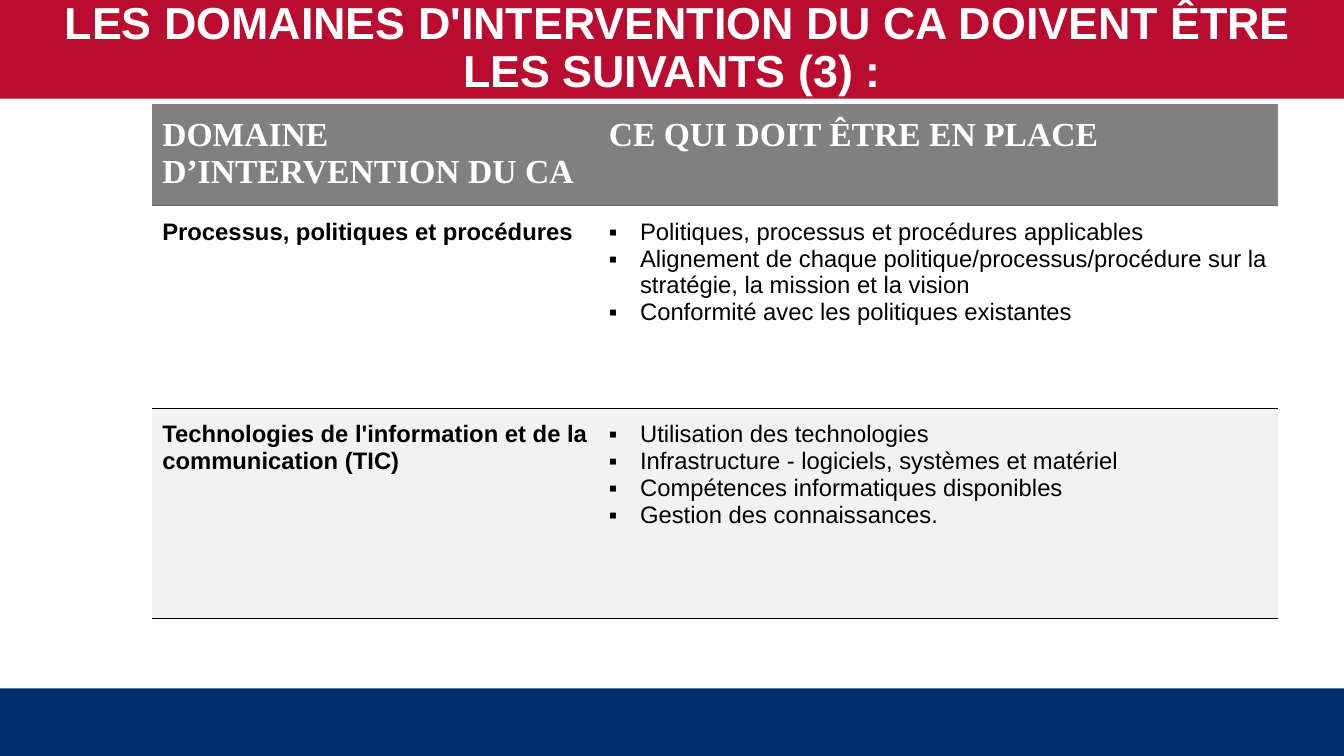
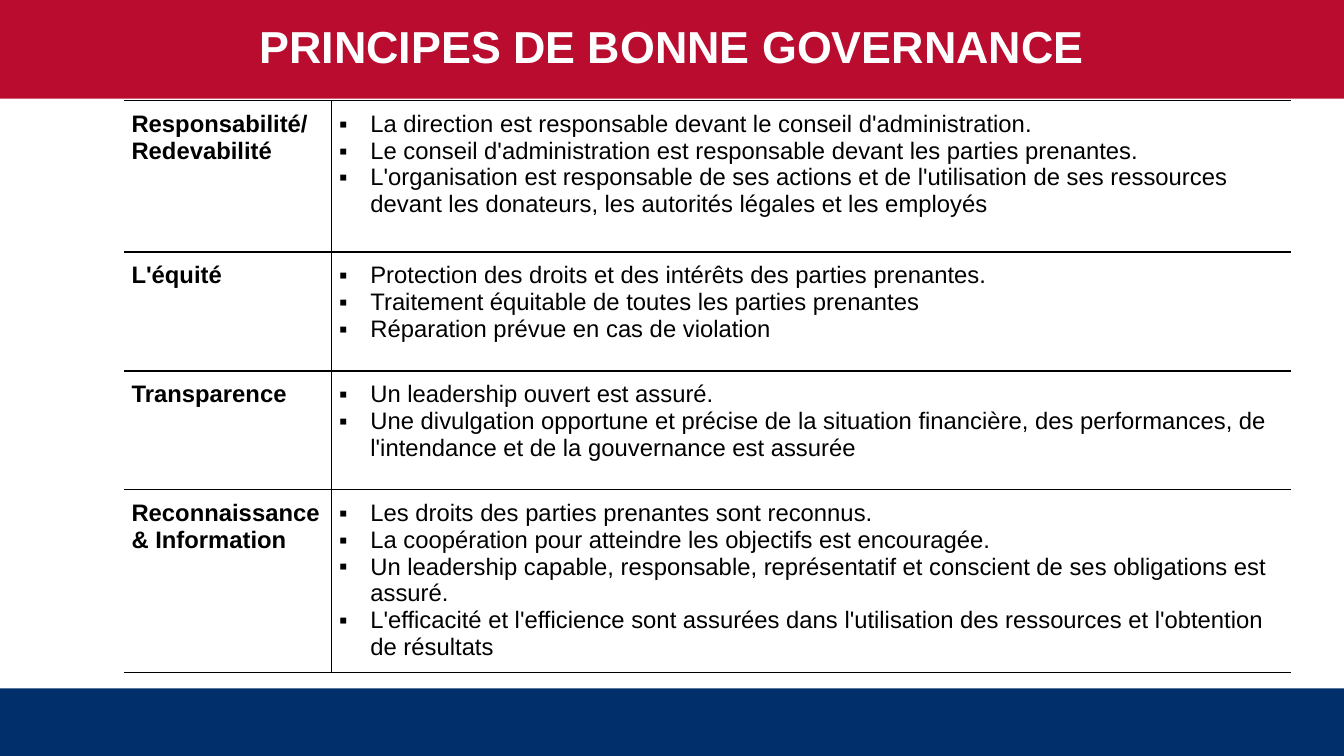
"""Builds two slides on board responsibilities and governance principles."""
from dataclasses import dataclass

from lxml import etree
from pptx import Presentation
from pptx.dml.color import RGBColor
from pptx.enum.shapes import MSO_SHAPE
from pptx.enum.text import MSO_ANCHOR, MSO_AUTO_SIZE, PP_ALIGN
from pptx.oxml.ns import qn
from pptx.util import Inches, Pt

RECT = MSO_SHAPE.RECTANGLE
MIDDLE, TOP = MSO_ANCHOR.MIDDLE, MSO_ANCHOR.TOP
CENTER, LEFT = PP_ALIGN.CENTER, PP_ALIGN.LEFT
NO_FIT = MSO_AUTO_SIZE.NONE
TITLE_ONLY = 5

COLORS = {
    "red": "BA0C2F",
    "navy": "002F6C",
    "white": "FFFFFF",
    "black": "000000",
    "gray": "808080",
    "rule": "666666",
    "pale": "F2F2F2",
}
SANS, SERIF = "Arial", "Times New Roman"
CELL = 0.1
COLS, ROWS = 133.33, 75
TITLE_ROWS, FOOTER_ROWS = 9.8, 6.7
TITLE_SPACING = 0.88
BULLET_INDENT = 3.1


@dataclass(frozen=True)
class Row:
    height: float
    label: str
    points: tuple[str, ...]
    fill: str = "white"
    header: bool = False


@dataclass(frozen=True)
class TableSlide:
    title: str
    left: float
    top: float
    widths: tuple[float, float]
    margins: tuple[float, float]
    rows: tuple[Row, ...]
    outer_top: bool = False
    divider: bool = False


SLIDES = (
    TableSlide(
        " LES DOMAINES D'INTERVENTION DU CA DOIVENT ÊTRE LES SUIVANTS (3) :",
        15.1, 10.3, (44.3, 67.4), (1, 1.3),
        (
            Row(10.1, "DOMAINE D’INTERVENTION DU CA", ("CE QUI DOIT ÊTRE EN PLACE",),
                "gray", header=True),
            Row(20.1, "Processus, politiques et procédures", (
                "Politiques, processus et procédures applicables",
                "Alignement de chaque politique/processus/procédure sur la stratégie, "
                "la mission et la vision",
                "Conformité avec les politiques existantes",
            )),
            Row(20.9, "Technologies de l'information et de la communication (TIC)", (
                "Utilisation des technologies",
                "Infrastructure - logiciels, systèmes et matériel",
                "Compétences informatiques disponibles",
                "Gestion des connaissances.",
            ), "pale"),
        ),
    ),
    TableSlide(
        "PRINCIPES DE BONNE GOVERNANCE",
        12.3, 10, (20.6, 95.2), (0.75, 1),
        (
            Row(15, "Responsabilité/ Redevabilité", (
                "La direction est responsable devant le conseil d'administration.",
                "Le conseil d'administration est responsable devant les parties prenantes.",
                "L'organisation est responsable de ses actions et de l'utilisation de ses "
                "ressources devant les donateurs, les autorités légales et les employés",
            )),
            Row(11.8, "L'équité", (
                "Protection des droits et des intérêts des parties prenantes.",
                "Traitement équitable de toutes les parties prenantes",
                "Réparation prévue en cas de violation",
            )),
            Row(11.8, "Transparence", (
                "Un leadership ouvert est assuré.",
                "Une divulgation opportune et précise de la situation financière, des "
                "performances, de l'intendance et de la gouvernance est assurée",
            )),
            Row(18.1, "Reconnaissance & Information", (
                "Les droits des parties prenantes sont reconnus.",
                "La coopération pour atteindre les objectifs est encouragée.",
                "Un leadership capable, responsable, représentatif et conscient de ses "
                "obligations est assuré.",
                "L'efficacité et l'efficience sont assurées dans l'utilisation des "
                "ressources et l'obtention de résultats",
            )),
        ),
        outer_top=True, divider=True,
    ),
)


def grid(n: float) -> int:
    """Convert grid cells to a length."""
    return Inches(n * CELL)


def rgb(name: str) -> RGBColor:
    """Look up a colour of the palette."""
    return RGBColor.from_string(COLORS[name])


def style_runs(p, size: float, color: str, bold: bool, font: str = SANS) -> None:
    """Format every run of a paragraph."""
    for r in p.runs:
        r.font.name, r.font.size, r.font.bold = font, Pt(size), bold
        r.font.color.rgb = rgb(color)


def add_bullet(p) -> None:
    """Give a paragraph a square bullet with a hanging indent."""
    pPr = p._p.get_or_add_pPr()
    pPr.set("marL", str(grid(BULLET_INDENT)))
    pPr.set("indent", str(-grid(BULLET_INDENT)))
    clr = etree.SubElement(pPr, qn("a:buClr"))
    etree.SubElement(clr, qn("a:srgbClr"), val=COLORS["black"])
    etree.SubElement(pPr, qn("a:buFont"), typeface=SANS)
    etree.SubElement(pPr, qn("a:buChar"), char="▪")


def set_borders(cell, borders: dict[str, str | None]) -> None:
    """Draw each side of a cell in its colour, or leave it open."""
    tcPr = cell._tc.get_or_add_tcPr()
    for side in "LRTB":
        ln = etree.SubElement(tcPr, qn(f"a:ln{side}"), w=str(Pt(1)))
        color = borders.get(side)
        if color:
            fill = etree.SubElement(ln, qn("a:solidFill"))
            etree.SubElement(fill, qn("a:srgbClr"), val=COLORS[color])
        else:
            etree.SubElement(ln, qn("a:noFill"))


def row_borders(spec: TableSlide, i: int, j: int) -> dict[str, str | None]:
    """Work out the border colours of the cell in row i and column j."""
    def below(row: Row) -> str:
        """Choose the colour of the rule under a row."""
        return "rule" if row.header else "black"

    above = below(spec.rows[i - 1]) if i else "black" if spec.outer_top else None
    side = "L" if j else "R"
    return {"T": above, "B": below(spec.rows[i]), side: "black" if spec.divider else None}


def fill_cell(cell, row: Row, texts: tuple[str, ...], is_label: bool,
              margins: tuple[float, float]) -> None:
    """Write and format the paragraphs of one cell."""
    cell.fill.solid()
    cell.fill.fore_color.rgb = rgb(row.fill)
    cell.margin_left = cell.margin_right = grid(margins[0])
    cell.margin_top = cell.margin_bottom = grid(margins[1])
    cell.vertical_anchor = TOP
    tf = cell.text_frame
    tf.text = "\n".join(texts)
    for p in tf.paragraphs:
        p.alignment = LEFT
        if row.header:
            style_runs(p, 24, "white", True, SERIF)
        else:
            style_runs(p, 17, "black", is_label)
            if not is_label:
                add_bullet(p)


def add_grid_table(s, spec: TableSlide) -> None:
    """Add the two-column table of a slide."""
    heights = [row.height for row in spec.rows]
    table = s.shapes.add_table(
        len(heights), len(spec.widths), grid(spec.left), grid(spec.top),
        grid(sum(spec.widths)), grid(sum(heights))).table
    table.first_row = table.horz_banding = False
    for column, width in zip(table.columns, spec.widths):
        column.width = grid(width)
    for i, row in enumerate(spec.rows):
        table.rows[i].height = grid(row.height)
        for j, texts in enumerate(((row.label,), row.points)):
            cell = table.cell(i, j)
            set_borders(cell, row_borders(spec, i, j))
            fill_cell(cell, row, texts, j == 0, spec.margins)


def add_footer(s) -> None:
    """Add the footer band."""
    sp = s.shapes.add_shape(
        RECT, 0, grid(ROWS - FOOTER_ROWS), grid(COLS), grid(FOOTER_ROWS))
    sp.shadow.inherit = False
    sp.fill.solid()
    sp.fill.fore_color.rgb = rgb("navy")
    sp.line.fill.background()


def set_title(s, text: str) -> None:
    """Turn the title placeholder into the title band."""
    sp = s.shapes.title
    sp.left, sp.top, sp.width, sp.height = 0, 0, grid(COLS), grid(TITLE_ROWS)
    sp.fill.solid()
    sp.fill.fore_color.rgb = rgb("red")
    tf = sp.text_frame
    tf.text = text
    tf.auto_size, tf.word_wrap, tf.vertical_anchor = NO_FIT, True, MIDDLE
    tf.margin_left = tf.margin_right = grid(1)
    tf.margin_top = tf.margin_bottom = 0
    p = tf.paragraphs[0]
    p.alignment, p.line_spacing = CENTER, TITLE_SPACING
    style_runs(p, 32, "white", True)


def main() -> None:
    """Build and save the presentation."""
    prs = Presentation()
    prs.slide_width, prs.slide_height = grid(COLS), grid(ROWS)
    for spec in SLIDES:
        s = prs.slides.add_slide(prs.slide_layouts[TITLE_ONLY])
        add_footer(s)
        add_grid_table(s, spec)
        set_title(s, spec.title)
    prs.save("out.pptx")


if __name__ == "__main__":
    main()
